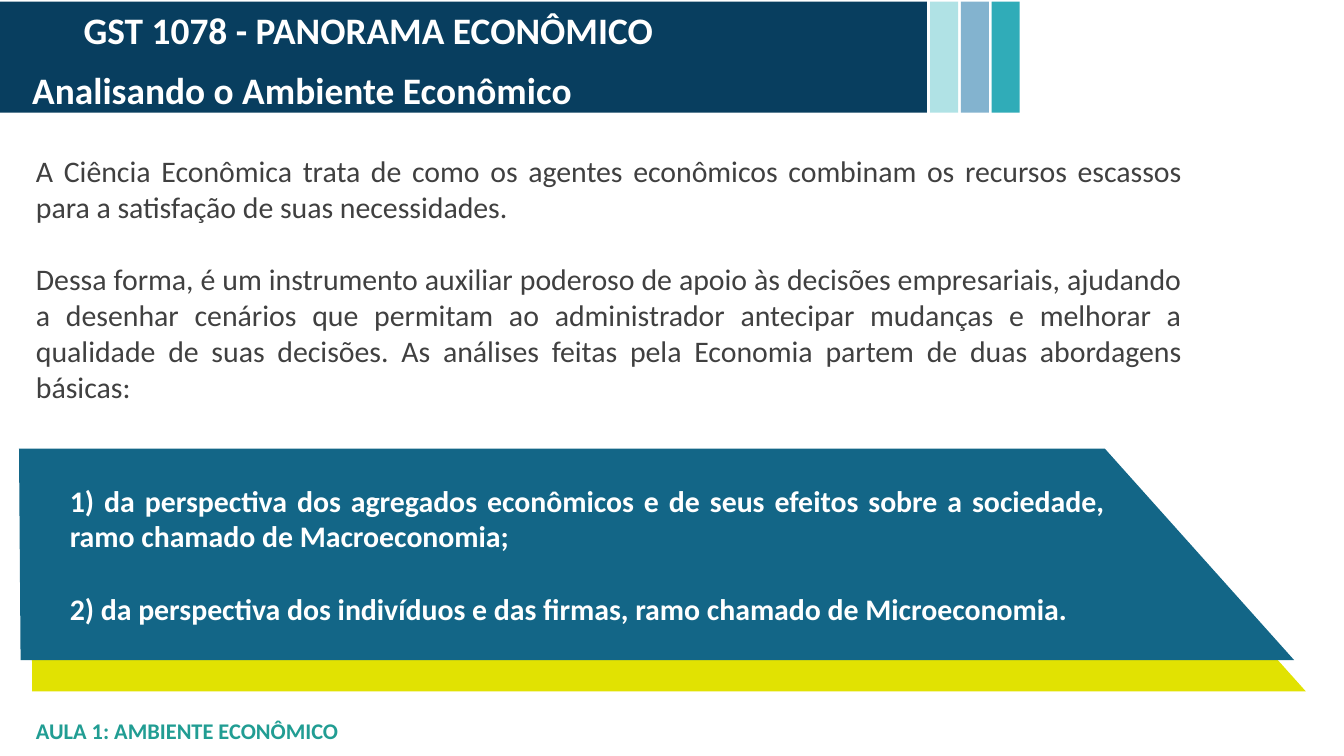
from pptx import Presentation
from pptx.dml.color import RGBColor
from pptx.enum import shapes, text
from pptx.util import Cm, Pt

COURSE = "GST 1078 - PANORAMA ECONÔMICO"
TOPIC = "Analisando o Ambiente Econômico"
LESSON = "AULA 1: AMBIENTE ECONÔMICO"
INTRODUCTION = [
    "A Ciência Econômica trata de como os agentes econômicos combinam os recursos "
    "escassos para a satisfação de suas necessidades.",
    "Dessa forma, é um instrumento auxiliar poderoso de apoio às decisões empresariais, "
    "ajudando a desenhar cenários que permitam ao administrador antecipar mudanças e "
    "melhorar a qualidade de suas decisões. As análises feitas pela Economia partem de "
    "duas abordagens básicas:",
]
APPROACHES = [
    "1) da perspectiva dos agregados econômicos e de seus efeitos sobre a sociedade, "
    "ramo chamado de Macroeconomia;",
    "2) da perspectiva dos indivíduos e das firmas, ramo chamado de Microeconomia.",
]
STRIPES = ["B0E2E5", "83B3CF", "30ACB8"]
BANNERS = [(0.58, 9.07, "E1E202"), (0.36, 8.48, "136687")]
BANNER_OUTLINE = [(0, 0), (20.52, 0), (24.1, 4), (0.03, 4)]
HEADER_TOP, HEADER_HEIGHT = 0.03, 2.1
STRIPE_LEFT, STRIPE_WIDTH, STRIPE_STEP = 17.58, 0.53, 0.58
JUSTIFY = text.PP_ALIGN.JUSTIFY


def colour(value):
    return RGBColor.from_string(value)


def paint(shape, fill):
    shape.shadow.inherit = False
    shape.fill.solid()
    shape.fill.fore_color.rgb = colour(fill)
    shape.line.fill.background()


def add_header_block(slide, left, width, fill):
    block = slide.shapes.add_shape(
        shapes.MSO_SHAPE.RECTANGLE, Cm(left), Cm(HEADER_TOP), Cm(width), Cm(HEADER_HEIGHT))
    paint(block, fill)


def add_banner(slide, left, top, fill):
    corners = [(Cm(left + x), Cm(top + y)) for x, y in BANNER_OUTLINE]
    builder = slide.shapes.build_freeform(*corners[0])
    builder.add_line_segments(corners[1:], close=True)
    paint(builder.convert_to_shape(), fill)


def write(slide, paragraphs, box, size=16, fill="FFFFFF", bold=True,
          align=text.PP_ALIGN.LEFT, gap=0, wrap=True, holder=None):
    left, top, width, height = map(Cm, box)
    if holder is None:
        holder = slide.shapes.add_textbox(left, top, width, height)
    else:
        holder.left, holder.top, holder.width, holder.height = left, top, width, height
    frame = holder.text_frame
    frame.text = "\n".join(paragraphs)
    frame.word_wrap = wrap
    frame.auto_size = text.MSO_AUTO_SIZE.NONE
    frame.vertical_anchor = text.MSO_ANCHOR.TOP
    for index, paragraph in enumerate(frame.paragraphs):
        paragraph.alignment = align
        paragraph.space_before = Pt(gap if index else 0)
        for run in paragraph.runs:
            run.font.name = "Calibri"
            run.font.size = Pt(size)
            run.font.bold = bold
            run.font.color.rgb = colour(fill)


def main():
    deck = Presentation()
    deck.slide_width, deck.slide_height = Cm(25.4), Cm(14.29)
    slide = deck.slides.add_slide(deck.slide_layouts[5])
    title = slide.shapes.title

    add_header_block(slide, -0.05, 17.57, "083E5F")
    for index, fill in enumerate(STRIPES):
        add_header_block(slide, STRIPE_LEFT + index * STRIPE_STEP, STRIPE_WIDTH, fill)

    write(slide, INTRODUCTION, (0.43, 2.77, 22.17, 7.44), fill="404040",
          bold=False, align=JUSTIFY, gap=19.5)
    for banner in BANNERS:
        add_banner(slide, *banner)
    write(slide, APPROACHES, (1.07, 8.99, 20.07, 3.07), align=JUSTIFY, gap=19.5)
    write(slide, [LESSON], (0.43, 13.44, 6.3, 0.76), size=12, fill="219D93", wrap=False)
    write(slide, [TOPIC], (0.36, 1.14, 10.8, 1.12), size=20, wrap=False)
    write(slide, [COURSE], (0.03, 0, 13.87, 1.12), size=20,
          align=text.PP_ALIGN.CENTER, holder=title)
    slide.shapes.element.append(title.element)

    deck.save("out.pptx")


if __name__ == "__main__":
    main()
